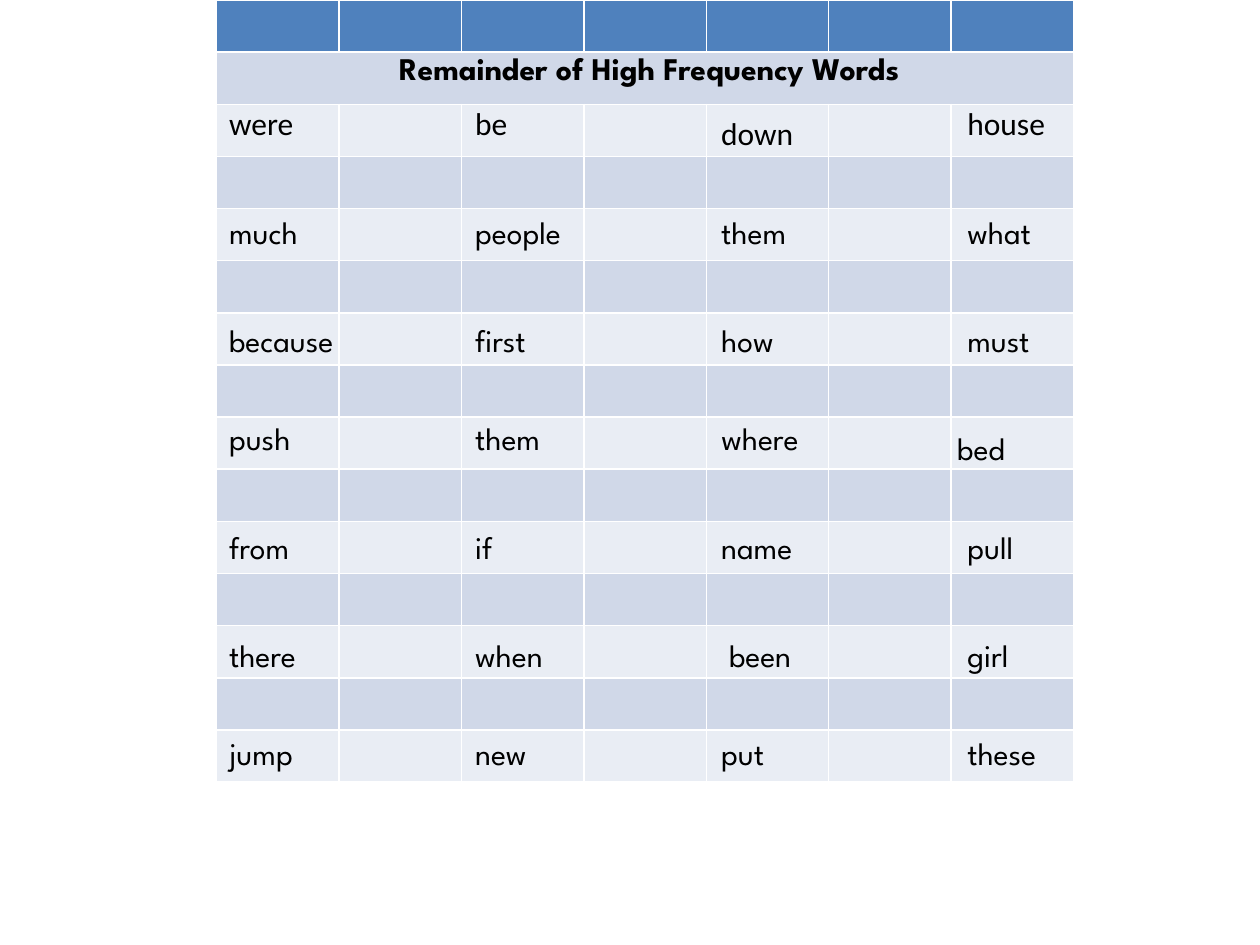
from pptx import Presentation as Deck
from pptx.dml.color import RGBColor as Rgb
from pptx.enum.text import MSO_AUTO_SIZE as Fit, PP_ALIGN as Align
from pptx.util import Inches, Pt

HUES = {"head": "4F81BD", "dark": "D0D8E8", "light": "E9EDF4", "ink": "000000"}
FONT = "League Spartan"
ROWS, COLS = 15, 7
LEFT, WIDE, HIGH = 1.72, 6.8, 6.21
STEP = 1.953
WORDS = [
    (0.78, "Calibri", ["were", "be", "down", "house"]),
    (1.64, FONT, ["much", "people", "them", "what"]),
    (2.5, FONT, ["because", "first", "how", "must"]),
    (3.28, FONT, ["push", "them", "where", "bed"]),
    (4.14, FONT, ["from", "if", "name", "pull"]),
    (5, FONT, ["there", "when", " been", "girl"]),
    (5.78, FONT, ["jump", "new", "put", "these"]),
]
WIDTHS = {"were": 1.02, "be": 1.02, "people": 1.17, "because": 1.33, "where": 1.09}
SHIFTS = {"down": (0, 0.08), "bed": (-0.08, 0.08)}


def style(par, face, bold=False):
    for run in par.runs:
        run.font.size = Pt(18)
        run.font.name = face
        run.font.bold = bold
        run.font.color.rgb = Rgb.from_string(HUES["ink"])


def add_grid(slide):
    size = [Inches(n) for n in (LEFT, 0, WIDE, HIGH)]
    grid = slide.shapes.add_table(ROWS, COLS, *size).table
    for row in range(ROWS):
        hue = "head" if row == 0 else "dark" if row % 2 else "light"
        for col in range(COLS):
            fill = grid.cell(row, col).fill
            fill.solid()
            fill.fore_color.rgb = Rgb.from_string(HUES[hue])
    head = grid.cell(1, 0)
    head.merge(grid.cell(1, COLS - 1))
    head.text_frame.text = " Remainder of High Frequency Words"
    par = head.text_frame.paragraphs[0]
    par.alignment = Align.CENTER
    style(par, FONT, True)


def add_word(slide, word, col, top, face):
    right, down = SHIFTS.get(word, (0, 0))
    size = (LEFT + col * STEP + right, top + down, WIDTHS.get(word, 0.94), 0.4)
    frame = slide.shapes.add_textbox(*[Inches(n) for n in size]).text_frame
    frame.word_wrap = True
    frame.auto_size = Fit.SHAPE_TO_FIT_TEXT
    frame.text = word
    style(frame.paragraphs[0], face)


def main():
    deck = Deck()
    deck.slide_width, deck.slide_height = Inches(10), Inches(7.5)
    slide = deck.slides.add_slide(deck.slide_layouts[6])
    add_grid(slide)
    for top, face, words in WORDS:
        for col, word in enumerate(words):
            add_word(slide, word, col, top, face)
    deck.save("out.pptx")


if __name__ == "__main__":
    main()
